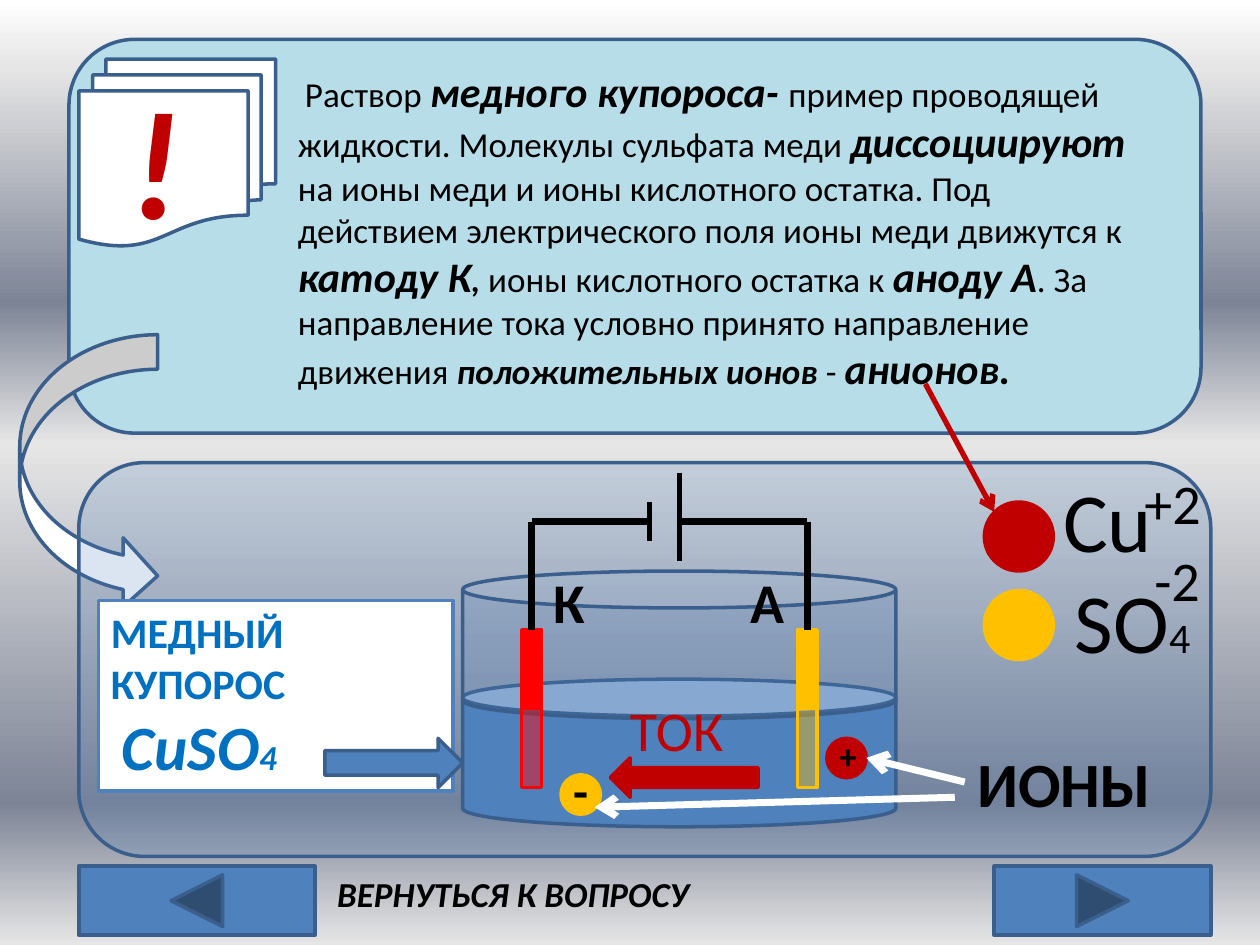
import pptx
import pptx.util
import pptx.dml.color
import pptx.enum.shapes
import pptx.enum.text
import pptx.oxml
import pptx.oxml.ns
import lxml.etree

Pt = pptx.util.Pt
SHAPE = pptx.enum.shapes.MSO_SHAPE
qn = pptx.oxml.ns.qn

COLORS = {
    "black": "000000", "white": "FFFFFF", "blue": "4F81BD", "outline": "3A5F8C",
    "pale": "B7DEE8", "ink": "0070C0", "crimson": "C00000", "red": "FF0000",
    "amber": "FFC000", "light": "E6E6E6", "steel": "7D8496",
}
BACKGROUND = [(0, "white"), (7, "light"), (32, "steel"), (47, "light"),
              (85, "steel"), (100, "light")]

PLAIN = {"size": 20}
STRONG = {"size": 24, "bold": True, "italic": True}
EXPLANATION = [[
    (" ", {"size": 18}),
    ("Раствор ", PLAIN),
    ("медного купороса- ", STRONG),
    ("пример проводящей жидкости. Молекулы сульфата меди ", PLAIN),
    ("диссоциируют", STRONG),
    (" на ионы меди и ионы кислотного остатка. Под действием "
     "электрического поля ионы меди движутся к ", PLAIN),
    ("катоду К", STRONG),
    (",", {"size": 20, "bold": True, "italic": True}),
    (" ионы кислотного остатка к ", PLAIN),
    ("аноду А", STRONG),
    (". За направление тока условно принято направление движения ", PLAIN),
    ("положительных ионов ", {"size": 20, "bold": True, "italic": True}),
    ("- ", PLAIN),
    ("анионов.", STRONG),
]]
VITRIOL = [
    [("МЕДНЫЙ КУПОРОС", {"size": 24, "bold": True, "color": "ink"})],
    [(" ", {"size": 28}),
     ("CuSO", {"size": 36, "bold": True, "italic": True, "color": "ink"}),
     ("4", {"size": 20, "bold": True, "italic": True, "color": "ink"})],
]
ION_FORMULAS = [
    [(" ", {"size": 18}), ("Cu", {"size": 48})],
    [(" SO", {"size": 48}), ("4", {"size": 24})],
]
CURRENT = [[(" ", {"size": 18}), ("ТОК", {"size": 32, "color": "crimson"})]]

# left edge, colour, opacity of the dipped part
ELECTRODES = [(298.1, "red", 45), (455.6, "amber", 41)]
ELECTRODE_LABELS = [("К", 309.4, 22.5), ("А", 421.9, 39.4)]
# sign, text size, colour, left, circle top, text top, text height
IONS = [("+", 20, "crimson", 472.5, 421.9, 416.3, 31.5),
        ("-", 28, "amber", 320.6, 442.8, 431.3, 41)]
# left, top of the charge; top and colour of the legend circle
LEGEND = [("+2", 646.9, 264.4, 286.9, "crimson"),
          ("-2", 652.5, 308.1, 337.5, "amber")]


def rgb(name):
    return pptx.dml.color.RGBColor.from_string(COLORS[name])


def paint_background(slide):
    fill = slide.background.fill
    fill.gradient()
    fill.gradient_angle = 270
    stops = next(slide.element.iter(qn("a:gsLst")))
    for stop in list(stops):
        stops.remove(stop)
    for percent, name in BACKGROUND:
        stop = lxml.etree.SubElement(stops, qn("a:gs"), pos=str(percent * 1000))
        lxml.etree.SubElement(stop, qn("a:srgbClr"), val=COLORS[name])


def write_run(paragraph, text, size=20, color="black", bold=False, italic=False):
    run = paragraph.add_run()
    run.text = text
    font = run.font
    font.name, font.size = "Calibri", Pt(size)
    font.bold, font.italic = bold, italic
    font.color.rgb = rgb(color)


def write_paragraphs(shape, paragraphs):
    frame = shape.text_frame
    frame.word_wrap = True
    frame.vertical_anchor = pptx.enum.text.MSO_ANCHOR.TOP
    frame.auto_size = pptx.enum.text.MSO_AUTO_SIZE.SHAPE_TO_FIT_TEXT
    for index, runs in enumerate(paragraphs):
        paragraph = frame.add_paragraph() if index else frame.paragraphs[0]
        paragraph.alignment = pptx.enum.text.PP_ALIGN.LEFT
        for text, style in runs:
            write_run(paragraph, text, **style)


def add_text(slide, box, paragraphs):
    write_paragraphs(slide.shapes.add_textbox(*map(Pt, box)), paragraphs)


def add_label(slide, box, text, **style):
    add_text(slide, box, [[(text, style)]])


def add_figure(slide, kind, box, fill="blue", line="outline", opacity=100):
    shape = slide.shapes.add_shape(kind, *map(Pt, box))
    shape.shadow.inherit = False
    shape.fill.solid()
    shape.fill.fore_color.rgb = rgb(fill)
    shape.line.color.rgb = rgb(line)
    shape.line.width = Pt(2)
    if opacity < 100:
        color = shape.element.spPr.find(qn("a:solidFill")).find(qn("a:srgbClr"))
        lxml.etree.SubElement(color, qn("a:alpha"), val=str(opacity * 1000))
    return shape


def add_line(slide, start, end, color="black", width=4, arrow=False):
    connector = slide.shapes.add_connector(
        pptx.enum.shapes.MSO_CONNECTOR.STRAIGHT, *map(Pt, start + end))
    connector.line.color.rgb = rgb(color)
    connector.line.width = Pt(width)
    if arrow:
        lxml.etree.SubElement(connector.line._get_or_add_ln(), qn("a:tailEnd"), type="arrow")
    lxml.etree.SubElement(connector.element.spPr, qn("a:effectLst"))
    return connector


def draw_explanation_panel(slide):
    add_figure(slide, SHAPE.ROUNDED_RECTANGLE, (39.4, 22.5, 646.9, 225), "pale")
    add_figure(slide, SHAPE.FLOWCHART_MULTIDOCUMENT, (45, 33.8, 112.5, 106.9), "white")
    add_label(slide, (67.5, 33.8, 56.3, 113.9), "!", size=88, color="crimson",
              bold=True, italic=True)
    add_figure(slide, SHAPE.CURVED_RIGHT_ARROW, (11.3, 191.3, 78.8, 157.5), "white")
    add_text(slide, (163.1, 33.8, 495, 196.9), EXPLANATION)


def draw_circuit(slide):
    """Draw the bath, its electrodes, the wires and the battery."""
    add_figure(slide, SHAPE.ROUNDED_RECTANGLE, (45, 264.4, 646.9, 225), opacity=20)
    add_figure(slide, SHAPE.CAN, (264.4, 388.1, 247.5, 84.4))
    add_figure(slide, SHAPE.CAN, (264.4, 326.3, 247.5, 84.4), opacity=21)
    vitriol = add_figure(slide, SHAPE.RECTANGLE, (56.3, 343.1, 202.5, 109), "white", "blue")
    write_paragraphs(vitriol, VITRIOL)
    add_figure(slide, SHAPE.RIGHT_ARROW, (185.6, 421.9, 78.8, 28.1))

    wire_top, plate_top, plate_width, plate_height = 298.1, 360, 11.3, 45
    for left, color, opacity in ELECTRODES:
        plate = add_figure(slide, SHAPE.RECTANGLE,
                           (left, plate_top, plate_width, plate_height), color, color)
        add_figure(slide, SHAPE.RECTANGLE,
                   (left, plate_top + plate_height, plate_width, plate_height),
                   color, color, opacity)
        center = left + plate_width / 2
        wire = add_line(slide, (center, wire_top), (center, plate_top))
        wire.end_connect(plate, 0)
    add_line(slide, (303.8, wire_top), (371.3, wire_top))
    add_line(slide, (388.1, wire_top), (461.3, wire_top))
    for text, left, width in ELECTRODE_LABELS:
        add_label(slide, (left, 320.6, width, 46.1), text, size=32, bold=True)
    add_line(slide, (371.3, 286.9), (371.3, 309.4), width=3)
    add_line(slide, (388.1, 270), (388.1, 320.6), width=3)


def draw_ions(slide):
    for sign, size, color, left, top, text_top, text_height in IONS:
        add_figure(slide, SHAPE.OVAL, (left, top, 22.5, 22.5), color, color)
        add_label(slide, (left, text_top, 28.1, text_height), sign, size=size, bold=True)
    add_label(slide, (551.3, 421.9, 129.4, 50.9), "ИОНЫ", size=36, bold=True)
    add_line(slide, (545.6, 455.6), (339.8, 461.3), "white", arrow=True)
    add_line(slide, (551.3, 446.9), (495, 433.1), "white", arrow=True)
    add_text(slide, (348.8, 393.8, 101.3, 46.1), CURRENT)
    add_figure(slide, SHAPE.LEFT_ARROW, (348.8, 433.1, 84.4, 22.5), "crimson", "crimson")


def draw_legend(slide):
    for charge, left, top, circle_top, color in LEGEND:
        add_figure(slide, SHAPE.OVAL, (562.5, circle_top, 39.4, 39.4), color, color)
        add_label(slide, (left, top, 73.1, 46.1), charge, size=32)
    add_text(slide, (596.3, 264.4, 95.6, 123.8), ION_FORMULAS)
    add_line(slide, (528.8, 219.4), (568.1, 292.5), "crimson", 3, arrow=True)


def draw_navigation(slide):
    add_figure(slide, SHAPE.ACTION_BUTTON_BACK_OR_PREVIOUS, (45, 495, 135, 39.4))
    add_label(slide, (185.6, 495, 242, 31.5), "ВЕРНУТЬСЯ К ВОПРОСУ",
              size=20, bold=True, italic=True)
    add_figure(slide, SHAPE.ACTION_BUTTON_FORWARD_OR_NEXT, (568.1, 495, 123.8, 39.4))


def main():
    presentation = pptx.Presentation()
    presentation.slide_width, presentation.slide_height = Pt(720), Pt(540)
    slide = presentation.slides.add_slide(presentation.slide_layouts[6])
    paint_background(slide)
    for draw in (draw_explanation_panel, draw_circuit, draw_ions, draw_legend,
                 draw_navigation):
        draw(slide)
    presentation.save("out.pptx")


if __name__ == "__main__":
    main()
